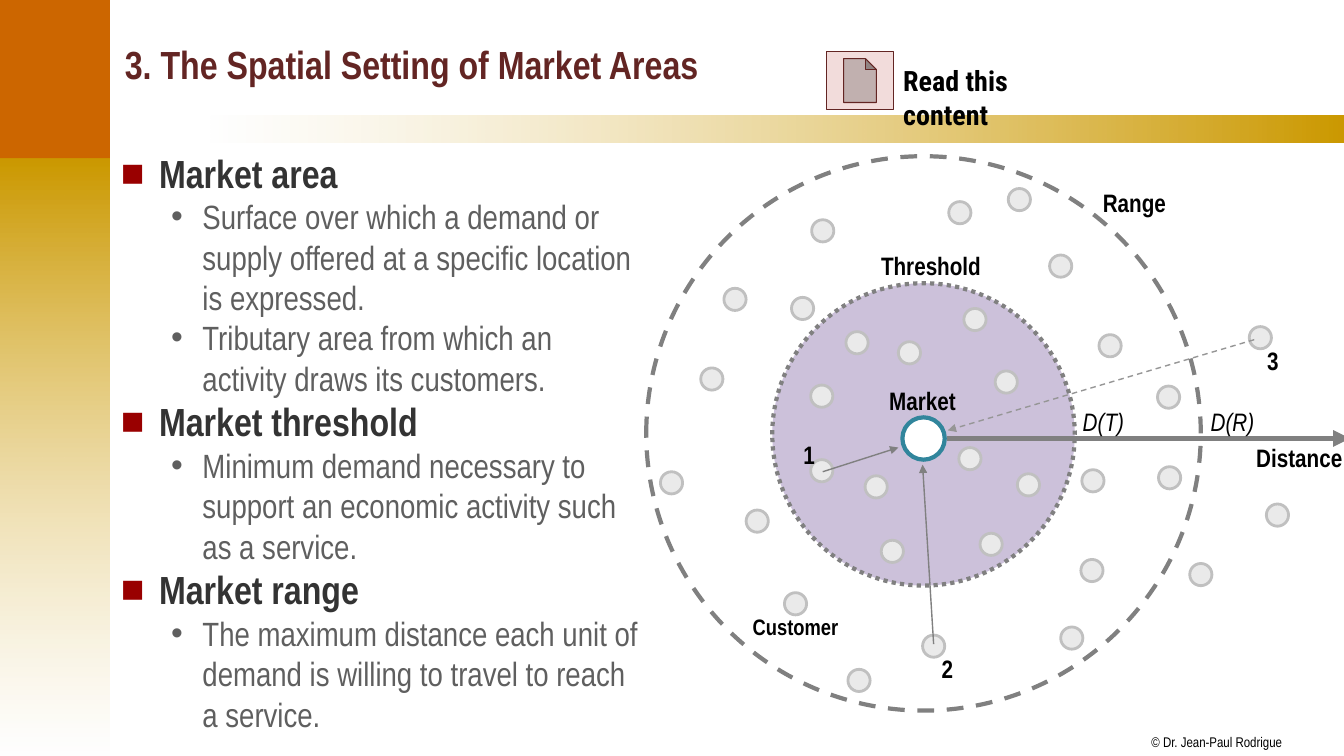
from lxml.etree import SubElement
from pptx import Presentation
from pptx.dml.color import RGBColor
from pptx.enum.dml import MSO_LINE
from pptx.enum.shapes import MSO_CONNECTOR, MSO_SHAPE
from pptx.enum.text import MSO_ANCHOR, MSO_AUTO_SIZE, PP_ALIGN
from pptx.oxml.ns import qn
from pptx.util import Inches, Pt

COLORS = {
    "gold": "CC9900", "orange": "CC6600", "white": "FFFFFF", "black": "000000",
    "maroon": "632523", "bullet": "990000", "heading": "333333", "detail": "5F5F5F",
    "gray": "808080", "light gray": "969696", "lilac": "CCC1DA", "teal": "31859C",
    "customer fill": "EAEAEA", "customer line": "C0C0C0", "pink": "F2DCDB",
}

NARROW = "Arial Narrow"
FORMATS = {
    "title": {"name": NARROW, "size": Pt(28), "bold": True, "color": "maroon"},
    "heading": {"name": NARROW, "size": Pt(28), "bold": True, "color": "heading"},
    "detail": {"name": NARROW, "size": Pt(24), "bold": False, "color": "detail"},
    "label": {"name": NARROW, "size": Pt(18), "bold": True, "color": "black"},
    "small label": {"name": NARROW, "size": Pt(16), "bold": True, "color": "black"},
    "distance": {"name": NARROW, "size": Pt(18), "italic": True, "color": "black"},
    "copyright": {"name": NARROW, "size": Pt(10), "color": "black"},
    "button": {"name": "Roboto Condensed", "size": Pt(20), "bold": True, "color": "black"},
}
BULLETS = {  # character, colour, left margin, hanging indent
    "heading": ("■", "bullet", 0.38, 0.38),
    "detail": ("•", "detail", 0.81, 0.31),
}

CONTENT = [
    ("Market area", [
        "Surface over which a demand or supply offered at a specific location is expressed.",
        "Tributary area from which an activity draws its customers."]),
    ("Market threshold", [
        "Minimum demand necessary to support an economic activity such as a service."]),
    ("Market range", [
        "The maximum distance each unit of demand is willing to travel to reach a service."]),
]

# Diagram parts are measured from the top left corner of the diagram.
CENTER_X = 2.76
CIRCLES = [  # diameter, centre height, fill, line colour, dash
    (5.5, 2.75, "white", "gray", MSO_LINE.DASH),
    (3, 2.76, "lilac", "gray", MSO_LINE.ROUND_DOT),
    (0.42, 2.8, "white", "teal", None),
]
CUSTOMER_SIZE = 0.22
CUSTOMERS = [
    (1, 3.51), (1.64, 3.01), (0.55, 2.1), (1.45, 1.4), (2.51, 1.84), (3.11, 2.89),
    (2.18, 3.17), (3.32, 3.74), (3.47, 2.13), (3.16, 1.51), (1.64, 2.27), (3.69, 3.15),
    (4.12, 4.67), (2.01, 5.09), (6.16, 3.45), (4.33, 3.11), (5.09, 3.08), (0.78, 1.31),
    (4.32, 4), (4.01, 0.98), (3.6, 0.32), (1.65, 0.63), (4.5, 1.77), (2.75, 4.75),
    (0.15, 3.13), (3.01, 0.45), (1.38, 4.33), (2.34, 3.81), (5.08, 2.28), (5.4, 4.04),
    (5.99, 1.69), (1.99, 1.74),
]
ARROWS = [  # start, end, colour, width, dash
    ((2.99, 2.8), (6.99, 2.8), "gray", 4, None),
    ((1.76, 3.13), (2.51, 2.89), "gray", 1, None),
    ((2.86, 4.84), (2.75, 3.06), "gray", 1, None),
    ((6.04, 1.82), (3, 2.72), "light gray", 1, MSO_LINE.DASH),
]
LABELS = [  # text, left, top, width, height, format
    ("Market", 2.32, 2.22, 0.87, 0.4, "label"),
    ("Threshold", 2.24, 0.88, 1.2, 0.4, "label"),
    ("Range", 4.44, 0.26, 0.83, 0.4, "label"),
    ("D(T)", 4.24, 2.43, 0.61, 0.4, "distance"),
    ("D(R)", 5.51, 2.43, 0.64, 0.4, "distance"),
    ("Customer", 0.96, 4.48, 1.06, 0.37, "small label"),
    ("1", 1.47, 2.76, 0.32, 0.4, "label"),
    ("2", 2.84, 4.88, 0.32, 0.4, "label"),
    ("3", 6.07, 1.83, 0.33, 0.4, "label"),
]


def rgb(name):
    return RGBColor.from_string(COLORS[name])


def set_line(line, color, width, dash=None):
    line.color.rgb = rgb(color)
    line.width = Pt(width)
    if dash:
        line.dash_style = dash


def set_font(font, style):
    for name, value in FORMATS[style].items():
        if name == "color":
            font.color.rgb = rgb(value)
        else:
            setattr(font, name, value)


def add_shape(slide, kind, box, fill=None):
    """Add a shape without line or shadow; its fill may be set later."""
    shape = slide.shapes.add_shape(kind, *map(Inches, box))
    shape.shadow.inherit = False
    shape.line.fill.background()
    if fill:
        shape.fill.solid()
        shape.fill.fore_color.rgb = rgb(fill)
    return shape


def add_gradient(slide, box, stops, angle):
    """Add a rectangle whose stops are pairs of colour and opacity in percent."""
    shape = add_shape(slide, MSO_SHAPE.RECTANGLE, box)
    shape.fill.gradient()
    shape.fill.gradient_angle = angle
    for stop, (color, opacity), position in zip(shape.fill.gradient_stops, stops, (0, 1)):
        stop.color.rgb = rgb(color)
        stop.position = position
    elements = shape._element.spPr.iter(qn("a:srgbClr"))
    for element, (color, opacity) in zip(elements, stops):
        if opacity < 100:
            SubElement(element, qn("a:alpha"), val=str(opacity * 1000))


def add_text(slide, box, text, style, wrap=False, inset=True):
    text_box = slide.shapes.add_textbox(*map(Inches, box))
    frame = text_box.text_frame
    frame.word_wrap = wrap
    if not wrap:
        frame.auto_size = MSO_AUTO_SIZE.SHAPE_TO_FIT_TEXT
    if not inset:
        for side in ("left", "top", "right", "bottom"):
            setattr(frame, f"margin_{side}", 0)
    paragraph = frame.paragraphs[0]
    paragraph.text = text
    set_font(paragraph.runs[0].font, style)
    return frame


def add_arrow(slide, start, end, color, width, dash):
    points = map(Inches, (*start, *end))
    connector = slide.shapes.add_connector(MSO_CONNECTOR.STRAIGHT, *points)
    set_line(connector.line, color, width, dash)
    properties = connector._element.spPr
    SubElement(properties.find(qn("a:ln")), qn("a:tailEnd"), type="triangle")
    SubElement(properties, qn("a:effectLst"))


def add_bullet(paragraph, style):
    character, color, margin, indent = BULLETS[style]
    properties = paragraph._p.get_or_add_pPr()
    properties.set("marL", str(Inches(margin)))
    properties.set("indent", str(-Inches(indent)))
    bullet_color = SubElement(properties, qn("a:buClr"))
    SubElement(bullet_color, qn("a:srgbClr"), val=COLORS[color])
    SubElement(properties, qn("a:buFont"), typeface="Arial")
    SubElement(properties, qn("a:buChar"), char=character)


def add_background(slide, left, top):
    add_gradient(slide, (left, top + 1.58, 1.11, 5.93), [("gold", 100), ("white", 51)], 270)
    add_gradient(slide, (left + 2.11, top + 1.16, 11.25, 0.26), [("white", 50), ("gold", 100)], 0)
    add_shape(slide, MSO_SHAPE.RECTANGLE, (left, top, 1.11, 1.58), "orange")
    add_text(slide, (left + 11.44, top + 7.29, 1.31, 0.17),
             "© Dr. Jean-Paul Rodrigue", "copyright", inset=False)


def add_title(slide, box):
    frame = add_text(slide, box, "3. The Spatial Setting of Market Areas", "title", wrap=True)
    frame.vertical_anchor = MSO_ANCHOR.MIDDLE


def add_definitions(slide, box):
    frame = slide.shapes.add_textbox(*map(Inches, box)).text_frame
    frame.word_wrap = True
    lines = []
    for heading, details in CONTENT:
        lines += [(heading, "heading"), *((detail, "detail") for detail in details)]
    for index, (text, style) in enumerate(lines):
        paragraph = frame.add_paragraph() if index else frame.paragraphs[0]
        add_bullet(paragraph, style)
        paragraph.level = 1 if style == "detail" else 0
        paragraph.text = text
        set_font(paragraph.runs[0].font, style)


def add_market_diagram(slide, left, top):
    for diameter, center_y, fill, color, dash in CIRCLES:
        box = (left + CENTER_X - diameter / 2, top + center_y - diameter / 2, diameter, diameter)
        circle = add_shape(slide, MSO_SHAPE.OVAL, box, fill)
        set_line(circle.line, color, 3, dash)
    for x, y in CUSTOMERS:
        box = (left + x, top + y, CUSTOMER_SIZE, CUSTOMER_SIZE)
        customer = add_shape(slide, MSO_SHAPE.OVAL, box, "customer fill")
        set_line(customer.line, "customer line", 2)
    for start, end, *line_format in ARROWS:
        start, end = ((left + x, top + y) for x, y in (start, end))
        add_arrow(slide, start, end, *line_format)
    for text, x, y, width, height, style in LABELS:
        frame = add_text(slide, (left + x, top + y, width, height), text, style)
        if text == "Customer":
            frame.paragraphs[0].alignment = PP_ALIGN.CENTER
    add_text(slide, (left + 6.06, top + 2.84, 0.86, 0.3), "Distance", "label", inset=False)


def add_reading_button(slide, left, top):
    button = add_shape(slide, MSO_SHAPE.ACTION_BUTTON_DOCUMENT, (left, top, 0.66, 0.58), "pink")
    set_line(button.line, "maroon", 0.75)
    add_text(slide, (left + 0.66, top + 0.07, 1.5, 0.44), "Read this content", "button", wrap=True)


def main():
    presentation = Presentation()
    presentation.slide_width = Inches(13.33)
    presentation.slide_height = Inches(7.5)
    slide = presentation.slides.add_slide(presentation.slide_layouts[6])
    add_background(slide, -0.02, -0.01)
    add_title(slide, (1.14, 0.11, 11.97, 1.04))
    add_definitions(slide, (1.1, 1.43, 5.36, 5.79))
    add_market_diagram(slide, 6.4, 1.55)
    add_reading_button(slide, 8.2, 0.51)
    presentation.save("out.pptx")


if __name__ == "__main__":
    main()
